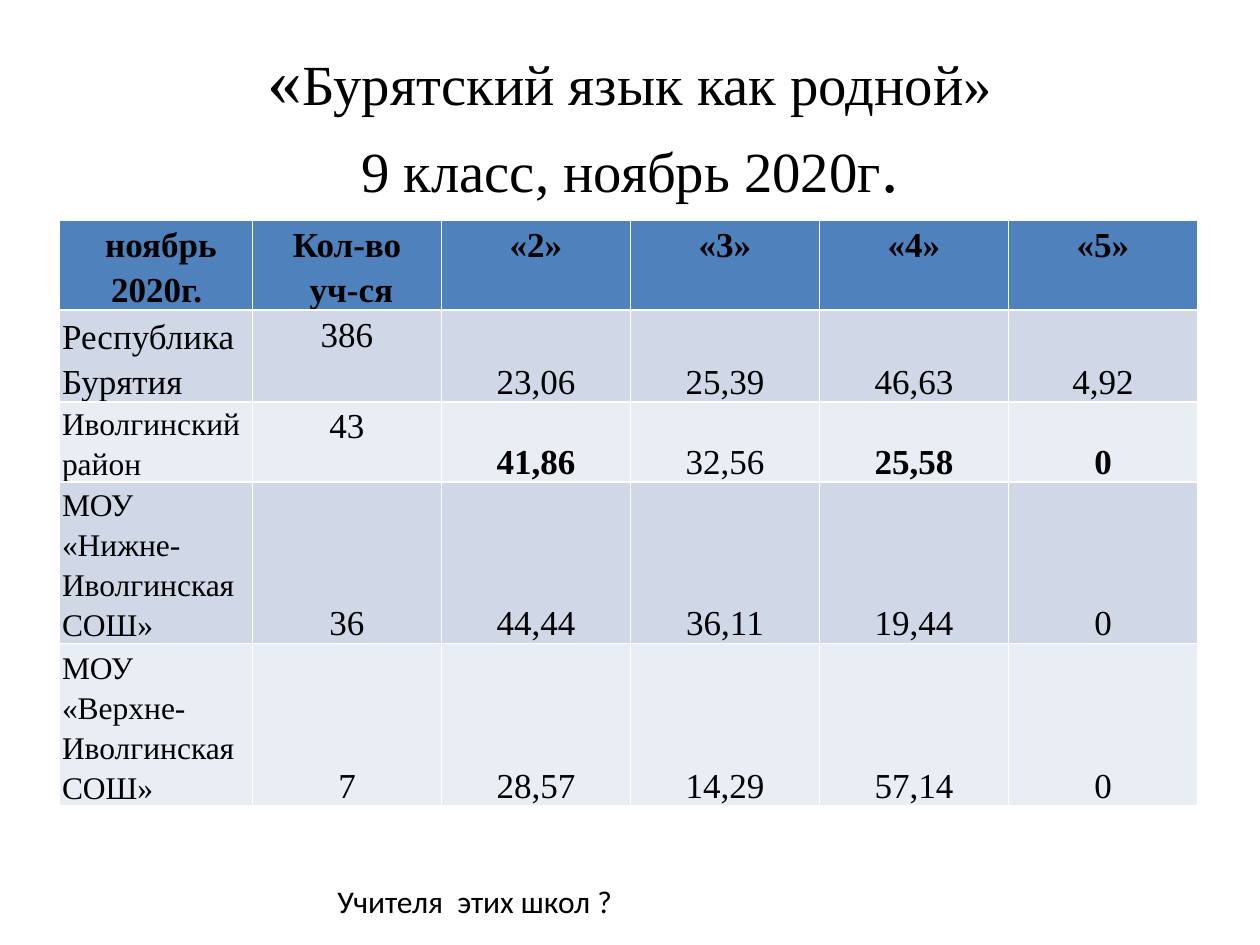
from pptx import Presentation
from pptx.dml.color import RGBColor
from pptx.enum.text import MSO_ANCHOR, PP_ALIGN
from pptx.util import Cm, Pt

BLACK = RGBColor(0x00, 0x00, 0x00)
HEADER_BLUE = RGBColor(0x4F, 0x81, 0xBD)
BAND_COLORS = [RGBColor(0xD0, 0xD8, 0xE8), RGBColor(0xE9, 0xED, 0xF4)]
SERIF = "Times New Roman"

HEADERS = ["ноябрь 2020г. ", "Кол-во\n уч-ся", "«2»", "«3»", "«4»", "«5»"]
RESULTS = [
    ["Республика Бурятия", "386", "23,06", "25,39", "46,63", "4,92"],
    ["Иволгинский район", "43", "41,86", "32,56", "25,58", "0"],
    ["МОУ «Нижне-Иволгинская СОШ»", "36", "44,44", "36,11", "19,44", "0"],
    ["МОУ «Верхне-Иволгинская СОШ»", "7", "28,57", "14,29", "57,14", "0"],
]
COLUMN_WIDTHS = [3.89] + [3.81] * 5
ROW_HEIGHTS = [1.78, 1.85, 1.6, 3.25, 3.28]
BOLD_CELLS = {(2, 2), (2, 4), (2, 5)}


class SlideBuilder:
    def __init__(self, presentation):
        self.slide = presentation.slides.add_slide(presentation.slide_layouts[5])

    def style_run(self, run, size, font=SERIF, bold=False):
        run.font.name = font
        run.font.size = Pt(size)
        run.font.bold = bold
        run.font.color.rgb = BLACK

    def title(self, lines, left, top, width, height):
        shape = self.slide.shapes.title
        shape.left, shape.top = Cm(left), Cm(top)
        shape.width, shape.height = Cm(width), Cm(height)
        frame = shape.text_frame
        frame.vertical_anchor = MSO_ANCHOR.MIDDLE
        for index, line in enumerate(lines):
            paragraph = frame.add_paragraph() if index else frame.paragraphs[0]
            paragraph.alignment = PP_ALIGN.CENTER
            paragraph.space_before = Pt(2 * index)
            for text, size in line:
                run = paragraph.add_run()
                run.text = text
                self.style_run(run, size)

    def cell(self, cell, text, fill, size, bold, alignment, anchor, spacing):
        cell.fill.solid()
        cell.fill.fore_color.rgb = fill
        cell.margin_left = cell.margin_right = Cm(0.05)
        cell.margin_top = cell.margin_bottom = 0
        cell.vertical_anchor = anchor
        cell.text_frame.text = text
        for paragraph in cell.text_frame.paragraphs:
            paragraph.alignment = alignment
            paragraph.line_spacing = spacing
            for run in paragraph.runs:
                self.style_run(run, size, bold=bold)

    def table(self, left, top):
        rows = [HEADERS] + RESULTS
        table = self.slide.shapes.add_table(
            len(rows), len(HEADERS), Cm(left), Cm(top),
            Cm(sum(COLUMN_WIDTHS)), Cm(sum(ROW_HEIGHTS))).table
        for column, width in zip(table.columns, COLUMN_WIDTHS):
            column.width = Cm(width)
        for row, height in zip(table.rows, ROW_HEIGHTS):
            row.height = Cm(height)
        for i, row in enumerate(rows):
            for j, text in enumerate(row):
                header = i == 0
                label = j == 0 and not header
                at_top = header or (j == 1 and i <= 2)
                self.cell(
                    table.cell(i, j), text,
                    fill=HEADER_BLUE if header else BAND_COLORS[(i - 1) % 2],
                    size=18 if label and i > 1 else 20,
                    bold=header or (i, j) in BOLD_CELLS,
                    alignment=PP_ALIGN.LEFT if label else PP_ALIGN.CENTER,
                    anchor=MSO_ANCHOR.TOP if at_top else MSO_ANCHOR.BOTTOM,
                    spacing=1.5 if i == 1 and j > 1 else 1.15)
        corner = table.cell(0, 0).text_frame.paragraphs[0]
        corner._p.get_or_add_pPr().set("marL", str(Cm(0.2)))

    def text(self, text, left, top, width, height):
        shape = self.slide.shapes.add_textbox(Cm(left), Cm(top), Cm(width), Cm(height))
        shape.text_frame.word_wrap = False
        shape.text_frame.text = text
        self.style_run(shape.text_frame.paragraphs[0].runs[0], 18, font="Calibri")


def main():
    presentation = Presentation()
    presentation.slide_width = Cm(25.4)
    presentation.slide_height = Cm(19.05)
    builder = SlideBuilder(presentation)
    builder.title(
        [[("«", 39.6), ("Бурятский язык как родной»", 32.4)],
         [("9 класс, ноябрь 2020г", 32.4), (".", 39.6)]],
        1.27, 0.86, 22.86, 3.18)
    builder.table(1.2, 4.45)
    builder.text("Учителя  этих школ ?", 6.55, 17.65, 6.12, 1.02)
    presentation.save("out.pptx")


if __name__ == "__main__":
    main()
